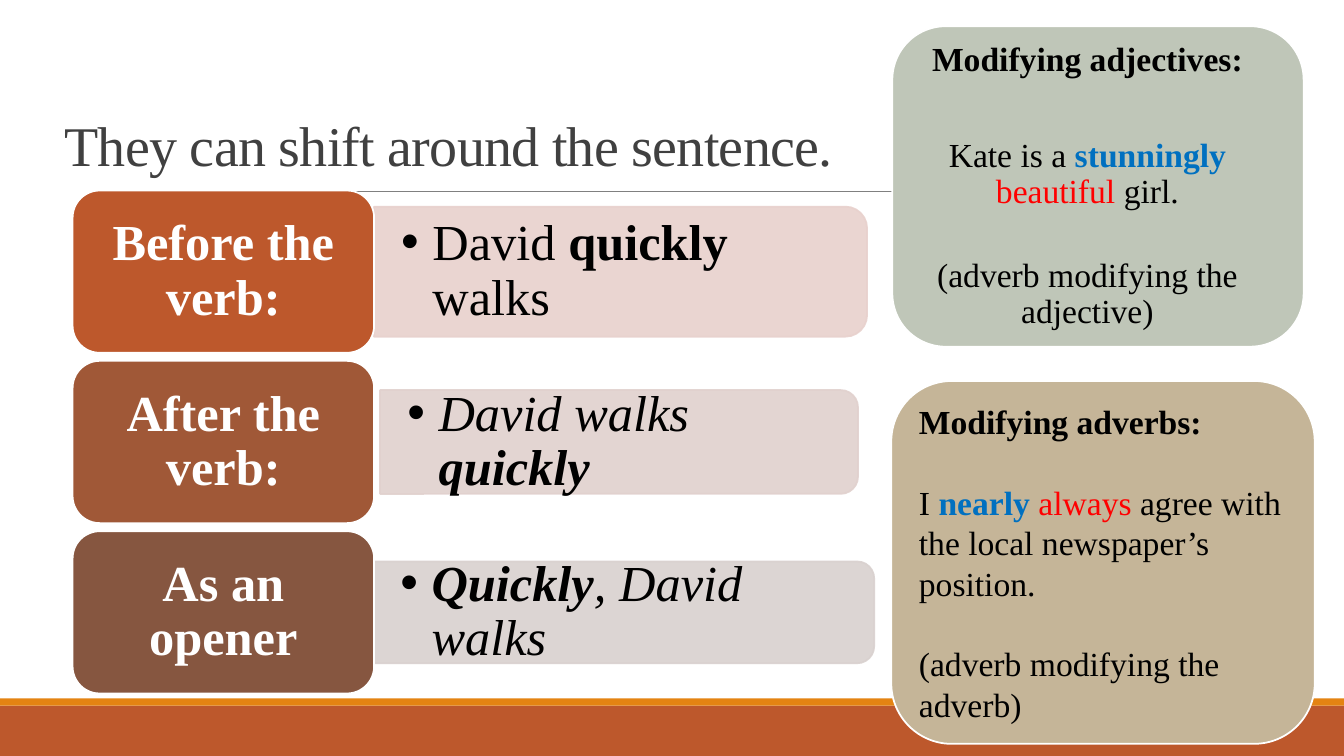
from pptx import Presentation
from pptx.dml.color import RGBColor
from pptx.enum.shapes import MSO_CONNECTOR, MSO_SHAPE
from pptx.enum.text import MSO_ANCHOR, MSO_AUTO_SIZE, PP_ALIGN
from pptx.oxml.ns import qn
from pptx.util import Inches, Pt
from lxml.etree import SubElement

FONT = "Times New Roman"
HEX = {
    "white": "FFFFFF", "black": "000000", "title": "404040", "rule": "808080",
    "blue": "0070C0", "red": "FF0000", "rust": "BD582C", "orange": "E48312",
    "brown": "A05837", "dark": "865640", "pink": "E8D1CD", "rose": "E1D1CE",
    "gray": "D9D1CF", "sage": "BFC6B8", "tan": "C5B598",
}

# Label, fill, bar fill, bar left, bar width, bar height, runs (text, style)
ROWS = [
    ("Before the verb:", "rust", "pink", 3.71, 4.89, 1.29,
     [("David ", ""), ("quickly ", "b"), ("walks", "")]),
    ("After the verb:", "brown", "rose", 3.77, 4.74, 1.03,
     [("David walks ", "i"), ("quickly", "bi")]),
    ("As an opener", "dark", "gray", 3.7, 4.97, 1.01,
     [("Quickly", "bi"), (", David walks", "i")]),
]
TOP, STEP, TALL = 1.89, 1.69, 1.61

# Each paragraph: runs (text, style, colour), then space after in points
ADJ = [
    ([("Modifying adjectives:", "b", "black")], 42.5),
    ([("Kate is a ", "", "black"), ("stunningly ", "b", "blue"),
      ("beautiful", "", "red"), (" girl.", "", "black")], 34),
    ([("(adverb modifying the adjective)", "", "black")], 0),
]
ADV = [
    ([("Modifying adverbs:", "b", "black")], 29),
    ([("I ", "", "black"), ("nearly ", "b", "blue"), ("always", "", "red"),
      (" agree with the local newspaper’s position.", "", "black")], 29),
    ([("(adverb modifying the adverb)", "", "black")], 0),
]


def color(name):
    return RGBColor.from_string(HEX[name])


def style(run, size, hue, look=""):
    font = run.font
    font.name, font.size = FONT, Pt(size)
    font.bold, font.italic = "b" in look, "i" in look
    font.color.rgb = color(hue)


def add_run(para, text, size, hue, look=""):
    run = para.add_run()
    run.text = text
    style(run, size, hue, look)


def set_frame(frame, side, edge):
    frame.word_wrap = True
    frame.vertical_anchor = MSO_ANCHOR.MIDDLE
    frame.margin_left = frame.margin_right = Inches(side)
    frame.margin_top = frame.margin_bottom = Inches(edge)


def add_box(slide, kind, left, top, width, height, fill, line=None):
    box = slide.shapes.add_shape(
        kind, Inches(left), Inches(top), Inches(width), Inches(height))
    box.shadow.inherit = False
    box.fill.solid()
    box.fill.fore_color.rgb = color(fill)
    if line:
        box.line.color.rgb = color(line)
        box.line.width = Pt(1.25)
    else:
        box.line.fill.background()
    return box


def fade(box):
    for hue in box._element.spPr.iter(qn("a:srgbClr")):
        SubElement(hue, qn("a:alpha"), val="90000")


def add_rule(slide):
    rule = slide.shapes.add_connector(
        MSO_CONNECTOR.STRAIGHT,
        Inches(1.31), Inches(1.9), Inches(12.21), Inches(1.9))
    rule.line.color.rgb = color("rule")
    rule.line.width = Pt(0.5)
    SubElement(rule._element.spPr, qn("a:effectLst"))


def set_title(slide):
    title = slide.shapes.title
    title.left, title.top = Inches(0.54), Inches(0.37)
    title.width, title.height = Inches(11.5), Inches(1.45)
    frame = title.text_frame
    frame.text = "They can shift around the sentence."
    frame.auto_size = MSO_AUTO_SIZE.NONE
    frame.vertical_anchor = MSO_ANCHOR.BOTTOM
    para = frame.paragraphs[0]
    para.alignment = PP_ALIGN.LEFT
    para.line_spacing = 0.85
    style(para.runs[0], 40, "title")
    para.runs[0].font._element.set("spc", "-50")


def add_bar(slide, left, mid, width, height, fill, runs):
    # A quarter turn puts the two round corners on the right
    bar = add_box(slide, MSO_SHAPE.ROUND_2_SAME_RECTANGLE,
                  left + (width - height) / 2, mid - width / 2,
                  height, width, fill, fill)
    bar.rotation = 90
    fade(bar)
    note = slide.shapes.add_textbox(
        Inches(left), Inches(mid - height / 2 + 0.05),
        Inches(width - 0.05), Inches(height - 0.1))
    set_frame(note.text_frame, 0.27, 0.14)
    para = note.text_frame.paragraphs[0]
    para.line_spacing = 0.9
    props = para._p.get_or_add_pPr()
    indent = Inches(0.31)
    props.set("marL", str(indent))
    props.set("indent", str(-indent))
    SubElement(props, qn("a:buFont"), typeface="Arial")
    SubElement(props, qn("a:buChar"), char="•")
    for text, look in runs:
        add_run(para, text, 36, "black", look)


def add_label(slide, top, fill, text):
    box = add_box(slide, MSO_SHAPE.ROUNDED_RECTANGLE,
                  0.72, top, 2.99, TALL, fill, "white")
    set_frame(box.text_frame, 0.15, 0.07)
    box.text_frame.text = text
    para = box.text_frame.paragraphs[0]
    para.alignment = PP_ALIGN.CENTER
    para.line_spacing = 0.9
    style(para.runs[0], 36, "white", "b")


def add_card(slide, place, fill, paras, align, gap, side):
    card = add_box(slide, MSO_SHAPE.ROUNDED_RECTANGLE, *place, fill, "white")
    frame = card.text_frame
    set_frame(frame, side, 0.05)
    for num, (runs, after) in enumerate(paras):
        para = frame.add_paragraph() if num else frame.paragraphs[0]
        para.alignment = align
        para.line_spacing = gap
        para.space_after = Pt(after)
        for text, look, hue in runs:
            add_run(para, text, 24, hue, look)
    return card


def main():
    deck = Presentation()
    deck.slide_width, deck.slide_height = Inches(13.33), Inches(7.5)
    slide = deck.slides.add_slide(deck.slide_layouts[5])

    # Footer bands, rule and title
    add_box(slide, MSO_SHAPE.RECTANGLE, 0, 7, 13.33, 0.5, "rust")
    add_box(slide, MSO_SHAPE.RECTANGLE, 0, 6.93, 13.33, 0.07, "orange")
    add_rule(slide)
    set_title(slide)

    # Adverb places
    for num, (label, fill, pale, left, width, height, runs) in enumerate(ROWS):
        top = TOP + num * STEP
        add_bar(slide, left, top + TALL / 2, width, height, pale, runs)
        add_label(slide, top, fill, label)

    # Cards on the right
    card = add_card(slide, (8.85, 0.26, 4.08, 3.18), "sage", ADJ,
                    PP_ALIGN.CENTER, 0.9, 0.15)
    card.text_frame.margin_right = Inches(0.36)
    add_card(slide, (8.84, 3.78, 4.2, 3.6), "tan", ADV,
             PP_ALIGN.LEFT, 1, 0.1)

    deck.save("out.pptx")


if __name__ == "__main__":
    main()
